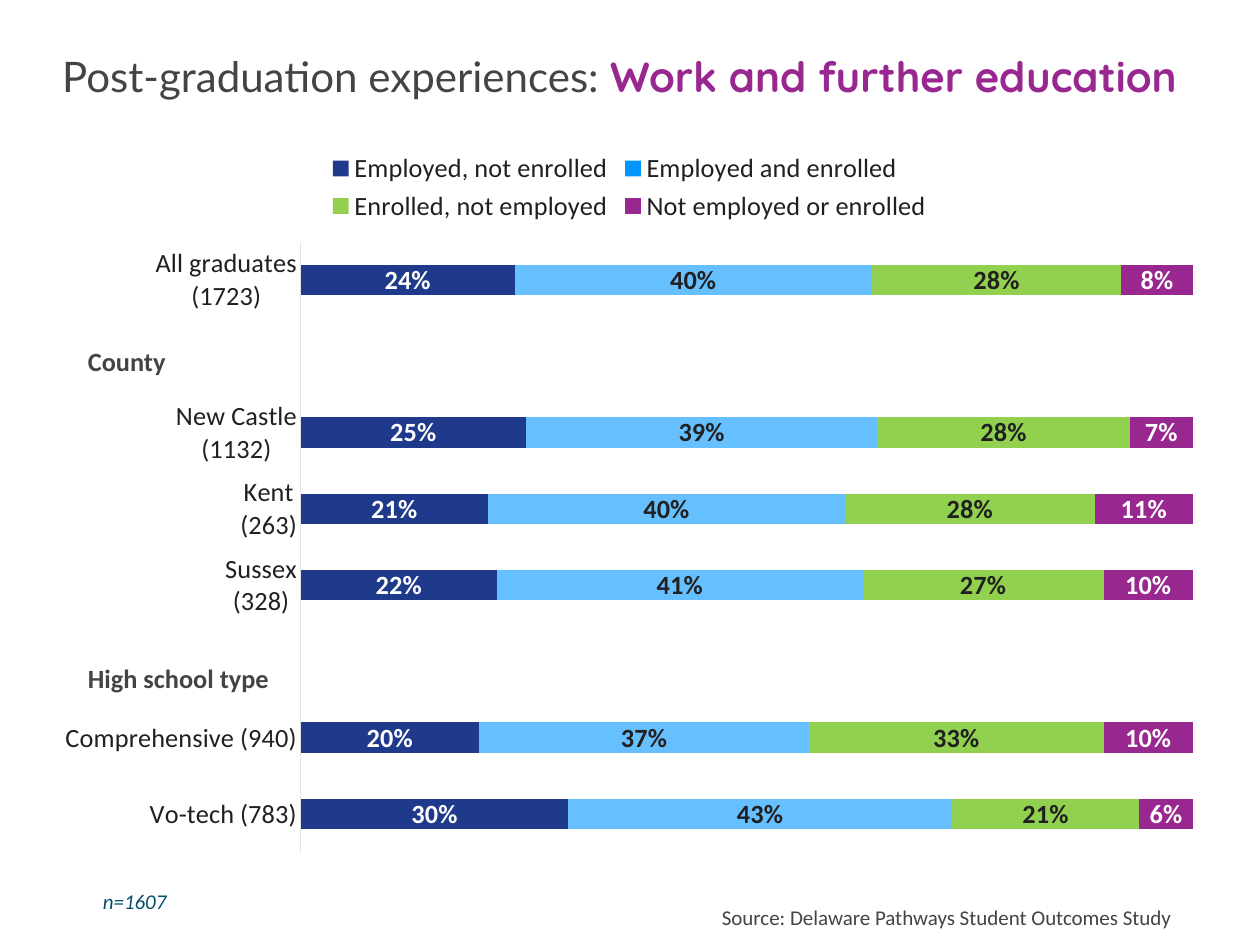
"""Build the slide on work and further education after graduation."""
import pptx
import pptx.chart.data
import pptx.dml.color
import pptx.enum.chart
import pptx.enum.text
import pptx.oxml
import pptx.oxml.ns
import pptx.util

Cm = pptx.util.Cm
COLORS = {"navy": "1F3A8B", "blue": "0096FF", "sky": "66C0FF",
          "green": "92D050", "purple": "98278F", "white": "FFFFFF",
          "ink": "202020", "gray": "444444", "teal": "054F6B",
          "rule": "E3E3E3"}
CATEGORIES = ["Vo-tech (783)", "Comprehensive (940)", "", "Sussex\n(328)",
              "Kent\n(263)", "New Castle\n(1132)", "",
              "All graduates\n(1723)"]
SERIES = [
    ("Employed, not enrolled", "navy", "navy", "white",
     [0.3, 0.2, None, 0.22, 0.21, 0.25, None, 0.24]),
    ("Employed and enrolled", "blue", "sky", "ink",
     [0.43, 0.37, None, 0.41, 0.4, 0.39, None, 0.4]),
    ("Enrolled, not employed", "green", "green", "ink",
     [0.21, 0.33, None, 0.27, 0.28, 0.28, None, 0.28]),
    ("Not employed or enrolled", "purple", "purple", "white",
     [0.06, 0.1, None, 0.1, 0.11, 0.07, None, 0.08]),
]


class Deck:
    """Hold the style and the current slide."""

    def __init__(self, width, height):
        self.prs = pptx.Presentation()
        self.prs.slide_width, self.prs.slide_height = Cm(width), Cm(height)
        self.s = self.prs.slides.add_slide(self.prs.slide_layouts[6])

    def rgb(self, name):
        """Return a named colour."""
        return pptx.dml.color.RGBColor.from_string(COLORS[name])

    def style(self, font, size, color, name="Calibri", **extra):
        """Set a font from its format values."""
        values = {"size": pptx.util.Pt(size), "name": name, **extra}
        for key, value in values.items():
            setattr(font, key, value)
        font.color.rgb = self.rgb(color)

    def text(self, box, runs, align="LEFT", grow=True):
        """Add a one-paragraph text box of (text, format) runs."""
        sp = self.s.shapes.add_textbox(*map(Cm, box))
        tf = sp.text_frame
        tf.word_wrap = True
        if grow:
            tf.auto_size = pptx.enum.text.MSO_AUTO_SIZE.SHAPE_TO_FIT_TEXT
        p = tf.paragraphs[0]
        p.alignment = pptx.enum.text.PP_ALIGN[align]
        for words, values in runs:
            r = p.add_run()
            r.text = words
            self.style(r.font, **values)

    def place(self, element, index, box, inner=False):
        """Give a chart part a fixed layout in fractions of the chart."""
        for old in element.findall(pptx.oxml.ns.qn("c:layout")):
            element.remove(old)
        target = '<c:layoutTarget val="inner"/>' if inner else ""
        modes = "".join(f'<c:{k}Mode val="edge"/>' for k in "xy")
        sizes = "".join(f'<c:{k} val="{v}"/>' for k, v in zip("xywh", box))
        element.insert(index, pptx.oxml.parse_xml(
            f'<c:layout {pptx.oxml.ns.nsdecls("c")}><c:manualLayout>'
            f'{target}{modes}{sizes}</c:manualLayout></c:layout>'))

    def chart(self, box, categories, series):
        """Add the stacked bar chart with its legend and labels."""
        enum = pptx.enum.chart
        data = pptx.chart.data.CategoryChartData(number_format="0%")
        data.categories = categories
        for name, *_, values in series:
            data.add_series(name, values)
        chart = self.s.shapes.add_chart(
            enum.XL_CHART_TYPE.BAR_STACKED_100, *map(Cm, box), data).chart
        chart.has_title = False
        self.style(chart.font, 10, "gray")

        chart.has_legend = True
        legend = chart.legend
        legend.position = enum.XL_LEGEND_POSITION.TOP
        legend.include_in_layout = False
        self.style(legend.font, 20, "ink")
        self.place(legend._element, 1, (0.24, 0.01, 0.52, 0.11))
        self.place(chart._chartSpace.chart.plotArea, 0,
                   (0.22, 0.14, 0.76, 0.84), inner=True)

        axis = chart.category_axis
        axis.major_tick_mark = enum.XL_TICK_MARK.NONE
        axis.format.line.color.rgb = self.rgb("rule")
        axis.format.line.width = pptx.util.Pt(0.75)
        self.style(axis.tick_labels.font, 20, "ink")
        scale = chart.value_axis
        scale.minimum_scale, scale.maximum_scale = 0, 1
        scale.has_major_gridlines = False
        scale.visible = False

        plot = chart.plots[0]
        plot.vary_by_categories = False
        plot.gap_width, plot.overlap = 150, 100
        for ser, (_, key, bar, label, values) in zip(plot.series, series):
            ser.format.fill.solid()
            ser.format.fill.fore_color.rgb = self.rgb(key)
            if bar != key:
                for i, value in enumerate(values):
                    if value is not None:
                        fill = ser.points[i].format.fill
                        fill.solid()
                        fill.fore_color.rgb = self.rgb(bar)
            labels = ser.data_labels
            labels.show_value = True
            labels.number_format = "0%"
            labels.number_format_is_linked = False
            self.style(labels.font, 20, label, bold=True)


def main():
    """Build and save the slide."""
    deck = Deck(33.83, 25.37)
    deck.text((1.42, 1.24, 30.66, 2.11), [
        ("Post-graduation experiences: ",
         {"size": 32, "color": "gray", "name": "Lato"}),
        ("Work and further education",
         {"size": 32, "color": "purple", "name": "Quicksand", "bold": True}),
    ], grow=False)
    deck.chart((1.14, 3.76, 31.52, 19.51), CATEGORIES, SERIES)
    for top, heading in ((9.14, "County"), (17.65, "High school type")):
        deck.text((2.11, top, 5.44, 1.12),
                  [(heading, {"size": 20, "color": "gray", "bold": True})])
    deck.text((1.42, 23.72, 3.43, 0.94),
              [("n=1607 ", {"size": 16, "color": "teal", "italic": True})],
              align="RIGHT")
    deck.text((19.13, 24.16, 14.7, 0.94),
              [("Source: Delaware Pathways Student Outcomes Study",
                {"size": 16, "color": "gray"})])
    deck.prs.save("out.pptx")


if __name__ == "__main__":
    main()
